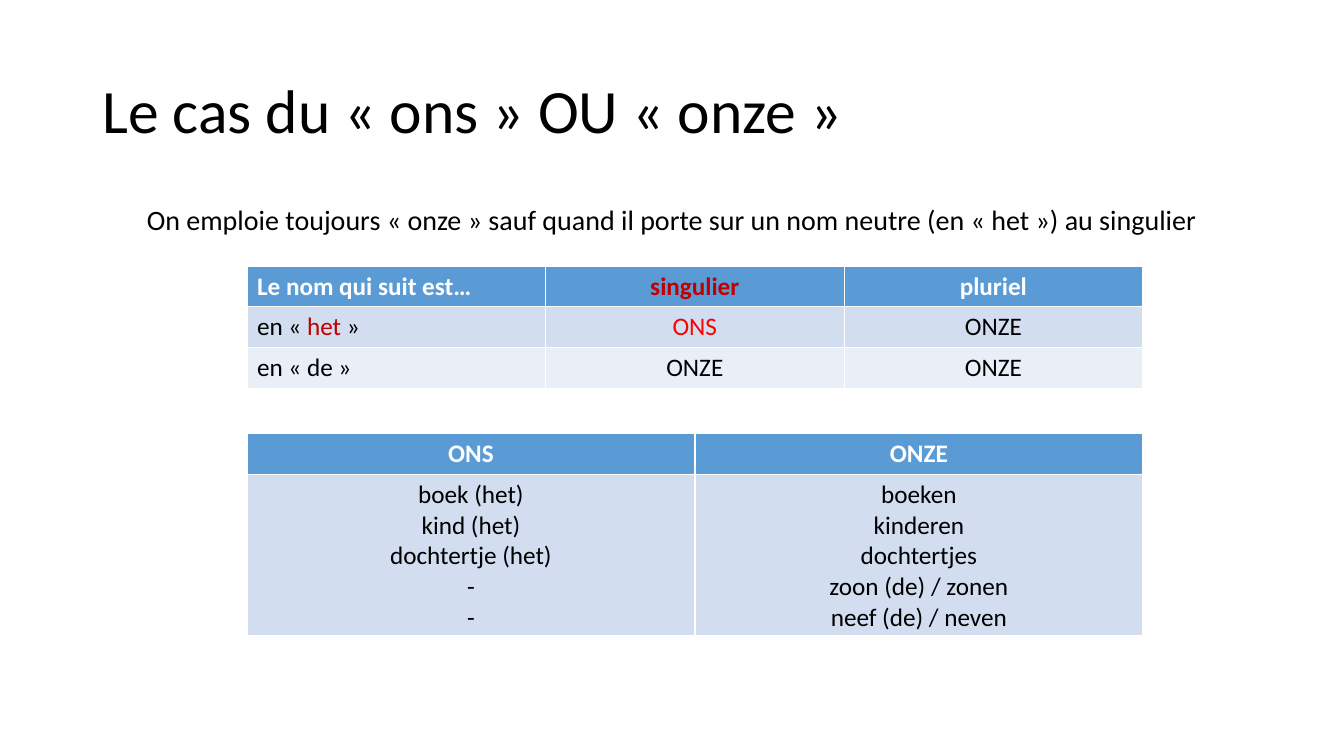
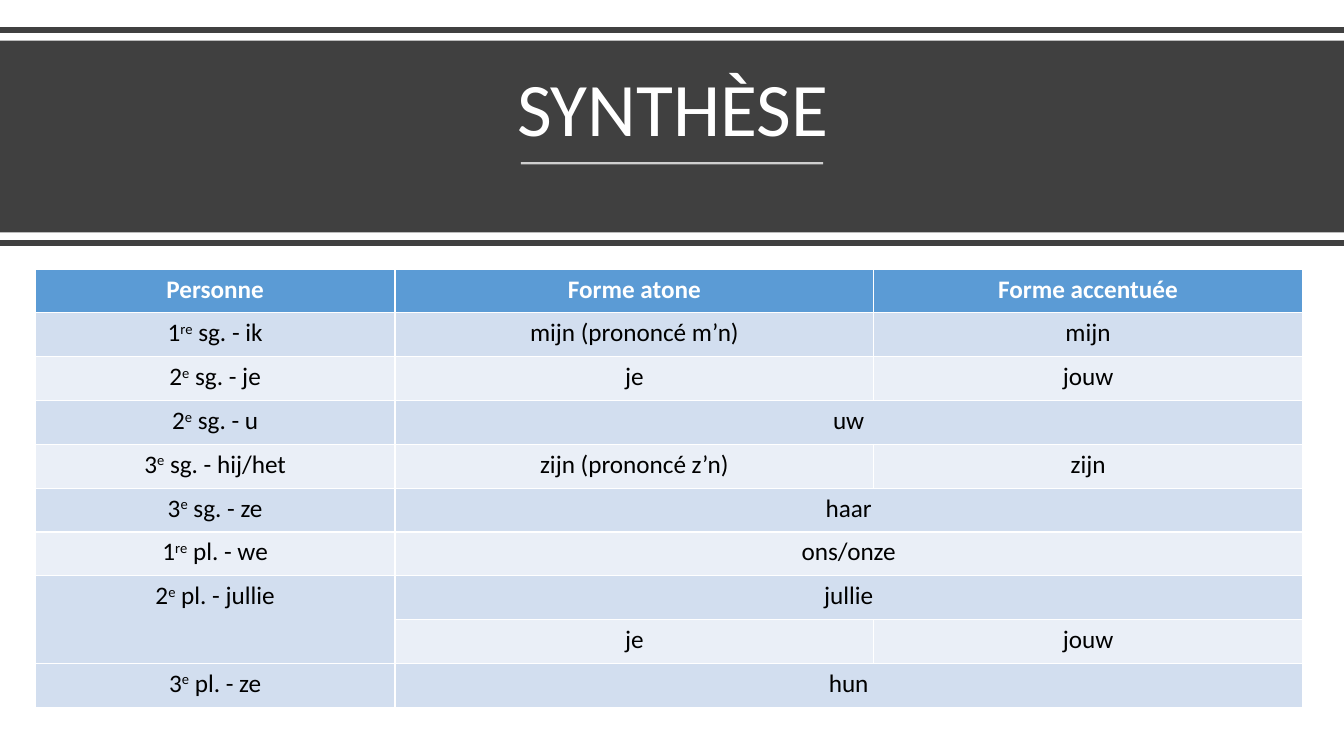
import dataclasses

import lxml.etree
import pptx
import pptx.dml.color
import pptx.enum.shapes
import pptx.enum.text
import pptx.oxml.ns
import pptx.util

Pt = pptx.util.Pt
Align = pptx.enum.text.PP_ALIGN
Anchor = pptx.enum.text.MSO_ANCHOR
qn = pptx.oxml.ns.qn
rgb = pptx.dml.color.RGBColor.from_string


@dataclasses.dataclass(frozen=True)
class Theme:
    font: str = "Calibri"
    black: object = rgb("000000")
    white: object = rgb("FFFFFF")
    dark: object = rgb("404040")
    header: object = rgb("5B9BD5")
    bands: tuple = (rgb("EAEFF7"), rgb("D2DEEF"))
    dark_red: object = rgb("C00000")
    red: object = rgb("FF0000")
    title_size: int = 44
    banner_size: int = 54
    lead_size: int = 20
    table_size: int = 18


theme = Theme()


def format_paragraph(paragraph, size, color, alignment, bold=False):
    paragraph.alignment = alignment
    paragraph.font.name = theme.font
    paragraph.font.size = Pt(size)
    paragraph.font.color.rgb = color
    paragraph.font.bold = bold


def add_filled_table(slide, left, top, widths, heights, rows, left_columns=()):
    """Cells are text or lists of (text, color, baseline) runs.

    None joins a cell to the one above (first column) or to its left.
    """
    table = slide.shapes.add_table(
        len(rows), len(widths), Pt(left), Pt(top), Pt(sum(widths)), Pt(sum(heights))
    ).table
    for column, width in zip(table.columns, widths):
        column.width = Pt(width)
    for row, height in zip(table.rows, heights):
        row.height = Pt(height)

    for i, row in enumerate(rows):
        for j, content in enumerate(row):
            cell = table.cell(i, j)
            cell.fill.solid()
            cell.fill.fore_color.rgb = theme.bands[i % 2] if i else theme.header
            if content is None:
                origin = table.cell(i, j - 1) if j else table.cell(i - 1, j)
                origin.merge(cell)
                continue
            if isinstance(content, str):
                cell.text_frame.text = content
            else:
                for text, color, baseline in content:
                    run = cell.text_frame.paragraphs[0].add_run()
                    run.text = text
                    if color is not None:
                        run.font.color.rgb = color
                    if baseline:
                        run.font._element.set("baseline", str(baseline * 1000))
            for paragraph in cell.text_frame.paragraphs:
                format_paragraph(
                    paragraph,
                    theme.table_size,
                    theme.black if i else theme.white,
                    Align.LEFT if j in left_columns else Align.CENTER,
                    bold=i == 0,
                )


presentation = pptx.Presentation()
presentation.slide_width = Pt(960)
presentation.slide_height = Pt(540)

# Titles: text, box, anchor, alignment, size, color
titles = [
    ("Le cas du « ons » OU « onze »", (66, 28.8, 828, 104.4),
     Anchor.MIDDLE, Align.LEFT, theme.title_size, theme.black),
    ("SYNTHÈSE", (42, 39, 877, 73.5),
     Anchor.BOTTOM, Align.CENTER, theme.banner_size, theme.white),
]
slides = []
for text, box, anchor, alignment, size, color in titles:
    slide = presentation.slides.add_slide(presentation.slide_layouts[5])
    title = slide.shapes.title
    title.left, title.top, title.width, title.height = map(Pt, box)
    frame = title.text_frame
    frame.text = text
    frame.word_wrap = True
    frame.auto_size = pptx.enum.text.MSO_AUTO_SIZE.NONE
    frame.vertical_anchor = anchor
    format_paragraph(frame.paragraphs[0], size, color, alignment)
    frame.paragraphs[0].line_spacing = 0.9
    slides.append(slide)
rule_slide, summary_slide = slides

# Slide 1: the rule
lead = rule_slide.shapes.add_textbox(Pt(66), Pt(144), Pt(828), Pt(36))
lead.text_frame.word_wrap = True
lead.text_frame.text = (
    "On emploie toujours « onze » sauf quand il porte sur un nom neutre "
    "(en « het ») au singulier"
)
lead_paragraph = lead.text_frame.paragraphs[0]
format_paragraph(lead_paragraph, theme.lead_size, theme.black, Align.CENTER)
lead_paragraph.line_spacing = 0.9

# Slide 1: rule table and examples table
add_filled_table(
    rule_slide, 176.4, 190, [213.3] * 3, [29.2] * 3,
    [
        ["Le nom qui suit est…", [("singulier", theme.dark_red, 0)], "pluriel"],
        [
            [("en « ", None, 0), ("het", theme.dark_red, 0), (" »", None, 0)],
            [("ONS", theme.red, 0)],
            "ONZE",
        ],
        ["en « de »", "ONZE", "ONZE"],
    ],
    left_columns=(0,),
)
add_filled_table(
    rule_slide, 176.4, 309.6, [320] * 2, [29.2, 115.2],
    [
        ["ONS", "ONZE"],
        [
            "boek (het)\nkind (het)\ndochtertje (het)\n-\n-",
            "boeken\nkinderen\ndochtertjes\nzoon (de) / zonen\nneef (de) / neven",
        ],
    ],
)

# Slide 2: banner
banner = summary_slide.shapes.add_shape(
    pptx.enum.shapes.MSO_SHAPE.RECTANGLE, Pt(0), Pt(29), Pt(960), Pt(137)
)
banner.shadow.inherit = False
banner.fill.solid()
banner.fill.fore_color.rgb = theme.dark
banner.line.fill.background()

# Slide 2: lines as start, end, height, color, width, opacity
for start, end, y, color, width, opacity in [
    (0, 960, 21.6, theme.dark, 4, 100),
    (372, 588, 116.6, theme.white, 1.5, 75),
    (0, 960, 173.4, theme.dark, 4, 100),
]:
    line = summary_slide.shapes.add_connector(
        pptx.enum.shapes.MSO_CONNECTOR.STRAIGHT, Pt(start), Pt(y), Pt(end), Pt(y)
    )
    line.line.color.rgb = color
    line.line.width = Pt(width)
    properties = line._element.spPr
    if opacity < 100:
        line_color = properties.find(".//" + qn("a:srgbClr"))
        alpha = lxml.etree.SubElement(line_color, qn("a:alpha"))
        alpha.set("val", str(opacity * 1000))
    lxml.etree.SubElement(properties, qn("a:effectLst"))

# Slide 2: title in front of the banner
summary_slide.shapes._spTree.append(summary_slide.shapes.title._element)

# Slide 2: summary table; a person is number, ordinal ending, rest
forms = [
    (("1", "re", " sg. - ik"), "mijn (prononcé m’n)", "mijn"),
    (("2", "e", " sg. - je"), "je", "jouw"),
    (("2", "e", " sg. - u"), "uw", None),
    (("3", "e", " sg. - hij/het"), "zijn (prononcé z’n)", "zijn"),
    (("3", "e", " sg. - ze"), "haar", None),
    (("1", "re", " pl. - we"), "ons/onze", None),
    (("2", "e", " pl. - jullie"), "jullie", None),
    (None, "je", "jouw"),
    (("3", "e", " pl. - ze"), "hun", None),
]
summary_rows = [["Personne", "Forme atone", "Forme accentuée"]]
for person, unstressed, stressed in forms:
    runs = person and [
        (text, None, baseline) for text, baseline in zip(person, (0, 30, 0))
    ]
    summary_rows.append([runs, unstressed, stressed])
add_filled_table(
    summary_slide, 25.2, 192.2, [257, 342, 306],
    [31.3] * len(summary_rows), summary_rows,
)

presentation.save("out.pptx")
